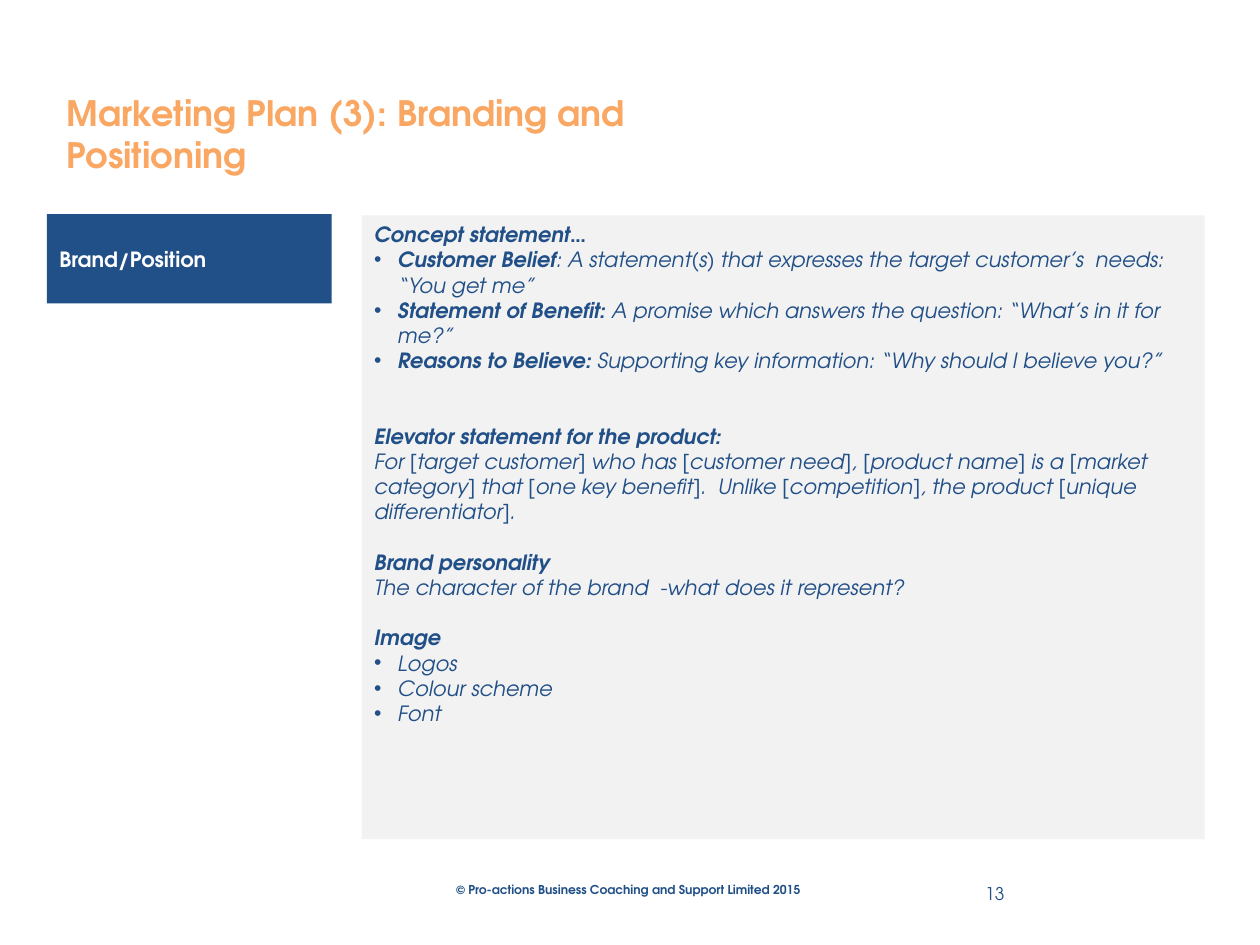
from lxml import etree
from pptx import Presentation
from pptx.dml.color import RGBColor
from pptx.enum.shapes import MSO_SHAPE
from pptx.enum.text import MSO_ANCHOR, PP_ALIGN
from pptx.oxml.ns import qn
from pptx.util import Pt

RECTANGLE = MSO_SHAPE.RECTANGLE
TOP, MIDDLE = MSO_ANCHOR.TOP, MSO_ANCHOR.MIDDLE
LEFT, RIGHT = PP_ALIGN.LEFT, PP_ALIGN.RIGHT

FONT = "TeX Gyre Adventor"
COLORS = {"navy": "214F87", "orange": "F9A763", "white": "FFFFFF", "panel": "F2F2F2"}
LINE = 14.4
INDENT = 13.5

SECTIONS = [
    ("Concept statement…", 0, [
        ("Customer Belief", ": A statement(s) that expresses the target customer’s  needs: “You get me”"),
        ("Statement of Benefit: ", "A promise which answers the question: “What’s in it for me?”"),
        ("Reasons to Believe:", " Supporting key information: “Why should I believe you?”"),
    ], True),
    ("Elevator statement for the product:", 2, [
        ("", "For [target customer] who has [customer need], [product name] is a "
             "[market category] that [one key benefit].  Unlike [competition], "
             "the product [unique differentiator]."),
    ], False),
    ("Brand personality", 1, [
        ("", "The character of the brand  -what does it represent?"),
    ], False),
    ("Image", 1, [("", "Logos"), ("", "Colour scheme"), ("", "Font")], True),
]


def color(name):
    """Return the named colour."""
    return RGBColor.from_string(COLORS[name])


def add_run(paragraph, text, *, size=12, ink="navy", bold=False, italic=False):
    """Append formatted text to a paragraph."""
    run = paragraph.add_run()
    run.text = text
    run.font.name = FONT
    run.font.size = Pt(size)
    run.font.bold = bold
    run.font.italic = italic
    run.font.color.rgb = color(ink)


def set_bullet(paragraph):
    """Give a paragraph a hanging round bullet."""
    properties = paragraph._p.get_or_add_pPr()
    properties.set("marL", str(Pt(INDENT)))
    properties.set("indent", str(-Pt(INDENT)))
    etree.SubElement(properties, qn("a:buFont")).set("typeface", "Arial")
    etree.SubElement(properties, qn("a:buChar")).set("char", "•")


def add_label(slide, box, text, *, wrap=True, anchor=TOP, align=LEFT, **style):
    """Add a text box holding one line."""
    frame = slide.shapes.add_textbox(*map(Pt, box)).text_frame
    frame.word_wrap = wrap
    frame.vertical_anchor = anchor
    frame.paragraphs[0].alignment = align
    add_run(frame.paragraphs[0], text, **style)


def add_panel(slide, box, fill, anchor):
    """Add a borderless filled rectangle and return its text frame."""
    panel = slide.shapes.add_shape(RECTANGLE, *map(Pt, box))
    panel.shadow.inherit = False
    panel.fill.solid()
    panel.fill.fore_color.rgb = color(fill)
    panel.line.fill.background()
    frame = panel.text_frame
    frame.word_wrap = True
    frame.vertical_anchor = anchor
    frame.paragraphs[0].alignment = LEFT
    return frame


def add_section(frame, heading, gap_lines, entries, bulleted):
    """Write a bold heading and its entries into the frame."""
    title = frame.add_paragraph() if gap_lines else frame.paragraphs[0]
    title.alignment = LEFT
    if gap_lines:
        title.space_before = Pt(gap_lines * LINE)
    add_run(title, heading, bold=True, italic=True)
    for lead, body in entries:
        entry = frame.add_paragraph()
        entry.alignment = LEFT
        if bulleted:
            set_bullet(entry)
        if lead:
            add_run(entry, lead, bold=True, italic=True)
        add_run(entry, body, italic=True)


def main():
    """Build the branding and positioning slide."""
    deck = Presentation()
    deck.slide_width, deck.slide_height = Pt(720), Pt(540)
    slide = deck.slides.add_slide(deck.slide_layouts[6])

    add_label(slide, (253.5, 500.4, 215.3, 15.8),
              "© Pro-actions Business Coaching and Support Limited 2015",
              wrap=False, size=7, bold=True)
    add_label(slide, (31, 49, 442, 31.7), "Marketing Plan (3): Branding and Positioning",
              size=20, ink="orange", bold=True)

    topic = add_panel(slide, (26.8, 122.4, 162.8, 51), "navy", MIDDLE)
    add_run(topic.paragraphs[0], "Brand/Position", ink="white", bold=True)

    details = add_panel(slide, (206.7, 123.1, 481.7, 356.4), "panel", TOP)
    for section in SECTIONS:
        add_section(details, *section)

    add_label(slide, (542.9, 496, 38.2, 28.8), "13", anchor=MIDDLE, align=RIGHT, size=10)
    deck.save("out.pptx")


if __name__ == "__main__":
    main()
